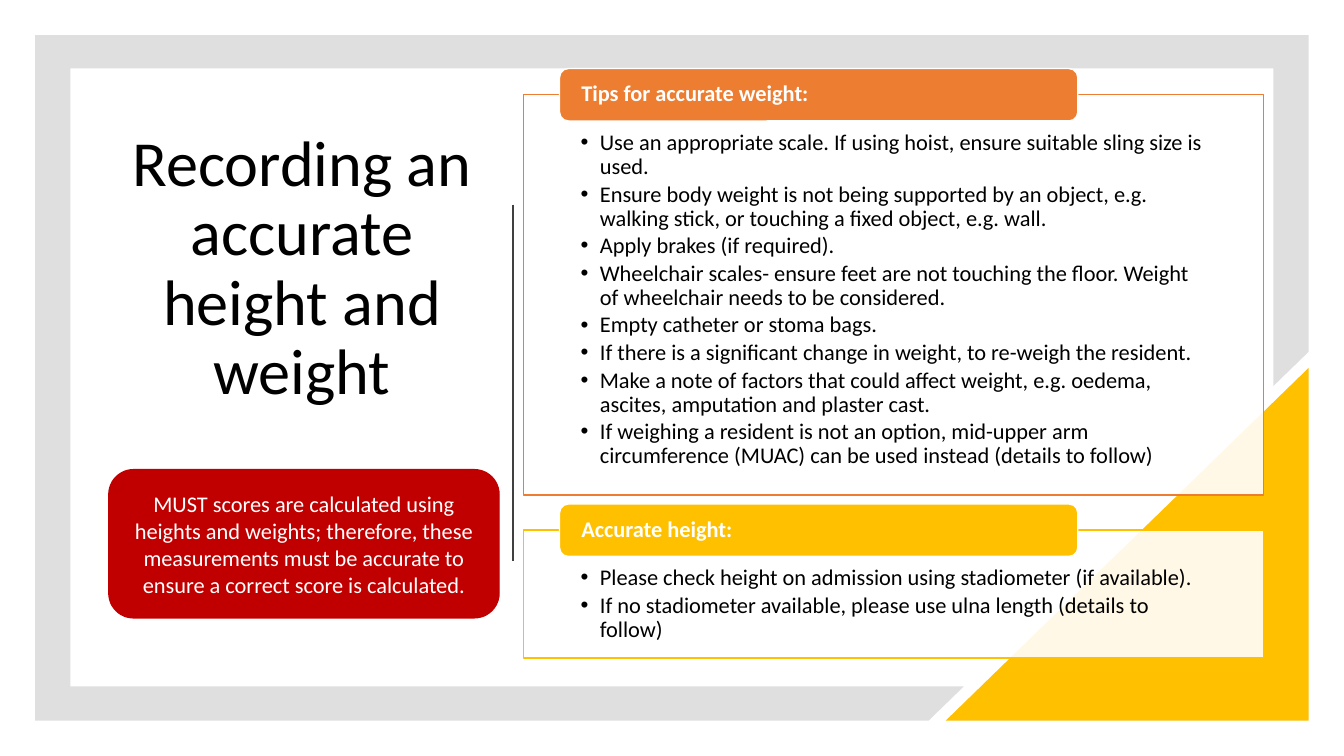
import pptx
import pptx.util
import pptx.dml.color
import pptx.enum.shapes
import pptx.enum.text
import pptx.oxml
import pptx.oxml.ns
from lxml import etree

Inches = pptx.util.Inches
Pt = pptx.util.Pt
RGBColor = pptx.dml.color.RGBColor
SHAPE = pptx.enum.shapes.MSO_SHAPE
ALIGN = pptx.enum.text.PP_ALIGN
ANCHOR = pptx.enum.text.MSO_ANCHOR
qn = pptx.oxml.ns.qn

BLACK = RGBColor(0x00, 0x00, 0x00)
WHITE = RGBColor(0xFF, 0xFF, 0xFF)
GREY = RGBColor(0x80, 0x80, 0x80)
DARK_GREY = RGBColor(0x40, 0x40, 0x40)
ORANGE = RGBColor(0xED, 0x7D, 0x31)
GOLD = RGBColor(0xFF, 0xC0, 0x00)
RED = RGBColor(0xC0, 0x00, 0x00)

FONT = "Calibri"
BODY_SIZE = 16

TITLE = "Recording an accurate height and weight"
MUST_NOTE = (
    "MUST scores are calculated using heights and weights; therefore, these "
    "measurements must be accurate to ensure a correct score is calculated."
)
# heading, colour, panel top, panel height, bullets
SECTIONS = [
    ("Tips for accurate weight:", ORANGE, 0.94, 3.97, [
        "Use an appropriate scale. If using hoist, ensure suitable sling size is used.",
        "Ensure body weight is not being supported by an object, e.g. walking stick, "
        "or touching a fixed object, e.g. wall.",
        "Apply brakes (if required).",
        "Wheelchair scales- ensure feet are not touching the floor. "
        "Weight of wheelchair needs to be considered.",
        "Empty catheter or stoma bags.",
        "If there is a significant change in weight, to re-weigh the resident.",
        "Make a note of factors that could affect weight, e.g. oedema, ascites, "
        "amputation and plaster cast.",
        "If weighing a resident is not an option, mid-upper arm circumference (MUAC) "
        "can be used instead (details to follow)",
    ]),
    ("Accurate height:", GOLD, 5.26, 1.27, [
        "Please check height on admission using stadiometer (if available).",
        "If no stadiometer available, please use ulna length (details to follow)",
    ]),
]
PANEL_LEFT, PANEL_WIDTH = 5.19, 7.34
TAB_LEFT, TAB_WIDTH, TAB_HEIGHT = 5.55, 5.14, 0.52
FRAME = [
    (0.35, 0.35), (12.98, 0.35), (12.98, 3.49), (12.63, 3.83), (12.63, 0.68),
    (0.7, 0.68), (0.7, 6.81), (9.56, 6.81), (9.21, 7.15), (0.35, 7.15),
]


def set_opacity(shape, percent):
    color = shape.element.spPr.find(qn("a:solidFill"))[0]
    etree.SubElement(color, qn("a:alpha")).set("val", str(percent * 1000))


def paint(shape, fill, line=None):
    shape.shadow.inherit = False
    shape.fill.solid()
    shape.fill.fore_color.rgb = fill
    if line is None:
        shape.line.fill.background()
    else:
        shape.line.color.rgb = line
        shape.line.width = Pt(1)


def add_block(page, kind, place, fill, line=None):
    block = page.shapes.add_shape(kind, *map(Inches, place))
    paint(block, fill, line)
    return block


def set_frame(box, anchor, insets=(0.1, 0.05, 0.1, 0.05)):
    frame = box.text_frame
    frame.word_wrap = True
    frame.vertical_anchor = anchor
    (frame.margin_left, frame.margin_top,
     frame.margin_right, frame.margin_bottom) = map(Inches, insets)
    return frame


def write(para, text, color, size=BODY_SIZE, align=ALIGN.LEFT, bold=False,
          spacing=0.9, after=0):
    para.alignment = align
    para.line_spacing = spacing
    para.space_after = Pt(after)
    span = para.add_run()
    span.text = text
    span.font.name = FONT
    span.font.size = Pt(size)
    span.font.bold = bold
    span.font.color.rgb = color


def add_bullet(para):
    properties = para._p.get_or_add_pPr()
    properties.set("marL", str(Inches(0.19)))
    properties.set("indent", str(Inches(-0.19)))
    etree.SubElement(properties, qn("a:buFont")).set("typeface", "Arial")
    etree.SubElement(properties, qn("a:buChar")).set("char", "•")


def add_background(page):
    start, *corners = [(Inches(x), Inches(y)) for x, y in FRAME]
    builder = page.shapes.build_freeform(*start)
    builder.add_line_segments(corners, close=True)
    border = builder.convert_to_shape()
    paint(border, GREY)
    set_opacity(border, 25)
    corner = add_block(page, SHAPE.RIGHT_TRIANGLE, (9.38, 3.65, 3.6, 3.5), GOLD)
    corner.element.spPr.find(qn("a:xfrm")).set("flipH", "1")


def add_title(page):
    box = page.shapes.add_textbox(*map(Inches, (1.1, 1.3, 3.79, 2.75)))
    frame = set_frame(box, ANCHOR.MIDDLE)
    write(frame.paragraphs[0], TITLE, BLACK, size=45.9, align=ALIGN.CENTER)


def add_divider(page):
    divider = page.shapes.add_connector(
        pptx.enum.shapes.MSO_CONNECTOR.STRAIGHT, *map(Inches, (5.09, 2.03, 5.09, 5.57)))
    divider.line.color.rgb = DARK_GREY
    divider.line.width = Pt(1.5)
    etree.SubElement(divider.element.spPr, qn("a:effectLst"))


def add_section(page, heading, color, top, height, bullets):
    """Draw a bulleted panel with its heading tab centred on the top edge."""
    panel = add_block(page, SHAPE.RECTANGLE,
                      (PANEL_LEFT, top, PANEL_WIDTH, height), WHITE, color)
    set_opacity(panel, 90)
    frame = set_frame(panel, ANCHOR.TOP, (0.57, 0.36, 0.57, 0.12))
    for index, bullet in enumerate(bullets):
        para = frame.add_paragraph() if index else frame.paragraphs[0]
        add_bullet(para)
        write(para, bullet, BLACK, after=2.4)

    tab = add_block(page, SHAPE.ROUNDED_RECTANGLE,
                    (TAB_LEFT, top - TAB_HEIGHT / 2, TAB_WIDTH, TAB_HEIGHT), color, WHITE)
    frame = set_frame(tab, ANCHOR.MIDDLE, (0.19, 0, 0.19, 0))
    write(frame.paragraphs[0], heading, WHITE, bold=True, after=5.6)


def add_must_note(page):
    note = add_block(page, SHAPE.ROUNDED_RECTANGLE, (1.08, 4.66, 3.87, 1.47), RED, RED)
    frame = set_frame(note, ANCHOR.MIDDLE)
    write(frame.paragraphs[0], MUST_NOTE, WHITE, align=ALIGN.CENTER, spacing=1.0)


def main():
    deck = pptx.Presentation()
    deck.slide_width, deck.slide_height = Inches(13.33), Inches(7.5)
    page = deck.slides.add_slide(deck.slide_layouts[6])
    add_background(page)
    add_title(page)
    add_divider(page)
    for section in SECTIONS:
        add_section(page, *section)
    add_must_note(page)
    deck.save("out.pptx")


if __name__ == "__main__":
    main()
